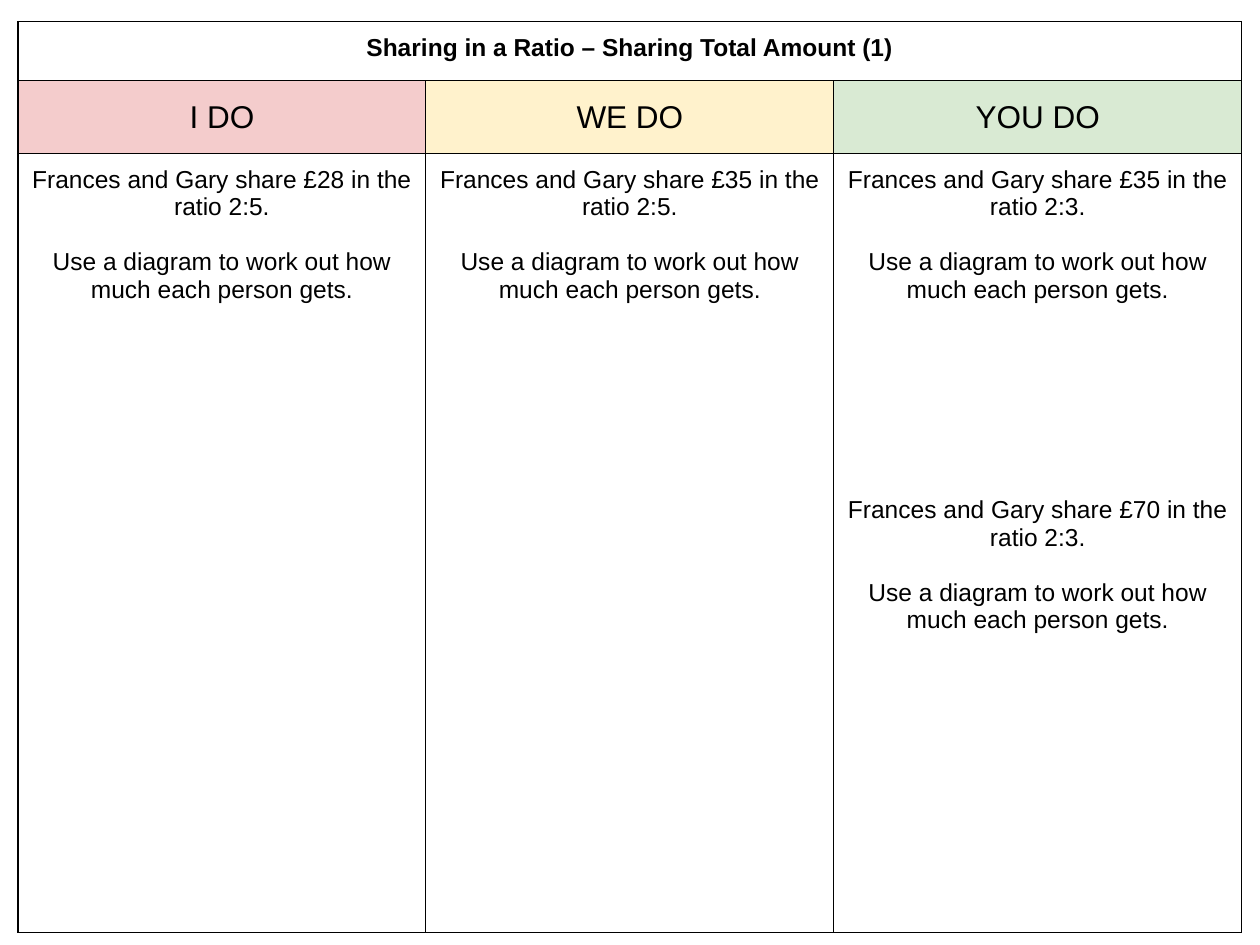
from pptx import Presentation
from pptx.dml.color import RGBColor
from pptx.enum.text import MSO_ANCHOR, PP_ALIGN
from pptx.oxml import parse_xml
from pptx.oxml.ns import nsdecls
from pptx.util import Pt

# Content
TITLE = "Sharing in a Ratio – Sharing Total Amount (1)"
TASK = "Frances and Gary share £{} in the ratio {}."
HINT = "Use a diagram to work out how much each person gets."
STAGES = [  # heading, fill, (amount, ratio) of each question
    ("I DO", "F4CCCC", [(28, "2:5")]),
    ("WE DO", "FFF2CC", [(35, "2:5")]),
    ("YOU DO", "D9EAD3", [(35, "2:3"), (70, "2:3")]),
]

THEME = {"font": "Arial", "ink": "000000", "text": 14, "head": 18, "line": 0.75}

# Layout, in points
LEFT, TOP = 10.3, 12.3
COL = 233.1
ROWS = [33.9, 41.6, 445]
INSET = 7.2
HINT_GAP, TASK_GAP = 15.7, 110


def write(cell, lines, size=THEME["text"], bold=False, fill=None,
          anchor=MSO_ANCHOR.TOP):
    """Fill a cell with (text, space before) lines."""
    cell.margin_left = cell.margin_right = Pt(INSET)
    cell.margin_top = cell.margin_bottom = Pt(INSET)
    cell.vertical_anchor = anchor
    if fill:
        cell.fill.solid()
        cell.fill.fore_color.rgb = RGBColor.from_string(fill)
    else:
        cell.fill.background()
    frame = cell.text_frame
    for i, (text, gap) in enumerate(lines):
        para = frame.add_paragraph() if i else frame.paragraphs[0]
        para.alignment = PP_ALIGN.CENTER
        para.space_before = Pt(gap)
        run = para.add_run()
        run.text = text
        font = run.font
        font.name, font.size, font.bold = THEME["font"], Pt(size), bold
        font.color.rgb = RGBColor.from_string(THEME["ink"])


def border(cell):
    """Draw a thin line on all four sides."""
    props = cell._tc.get_or_add_tcPr()
    for i, side in enumerate("LRTB"):
        props.insert(i, parse_xml(
            f'<a:ln{side} {nsdecls("a")} w="{Pt(THEME["line"])}">'
            f'<a:solidFill><a:srgbClr val="{THEME["ink"]}"/></a:solidFill>'
            f'</a:ln{side}>'))


def main():
    deck = Presentation()
    deck.slide_width, deck.slide_height = Pt(720), Pt(540)
    slide = deck.slides.add_slide(deck.slide_layouts[6])

    # Table grid
    count = len(STAGES)
    table = slide.shapes.add_table(
        len(ROWS), count, Pt(LEFT), Pt(TOP),
        Pt(COL * count), Pt(sum(ROWS))).table
    table.first_row = table.horz_banding = False
    for row, height in zip(table.rows, ROWS):
        row.height = Pt(height)
    for col in table.columns:
        col.width = Pt(COL)

    # Title across all columns
    table.cell(0, 0).merge(table.cell(0, count - 1))
    write(table.cell(0, 0), [(TITLE, 0)], bold=True)

    # Headings and questions
    for c, (head, fill, tasks) in enumerate(STAGES):
        write(table.cell(1, c), [(head, 0)], size=THEME["head"], fill=fill,
              anchor=MSO_ANCHOR.MIDDLE)
        lines = []
        for i, task in enumerate(tasks):
            lines += [(TASK.format(*task), TASK_GAP if i else 0),
                      (HINT, HINT_GAP)]
        write(table.cell(2, c), lines)

    for cell in table.iter_cells():
        border(cell)
    deck.save("out.pptx")


if __name__ == "__main__":
    main()
